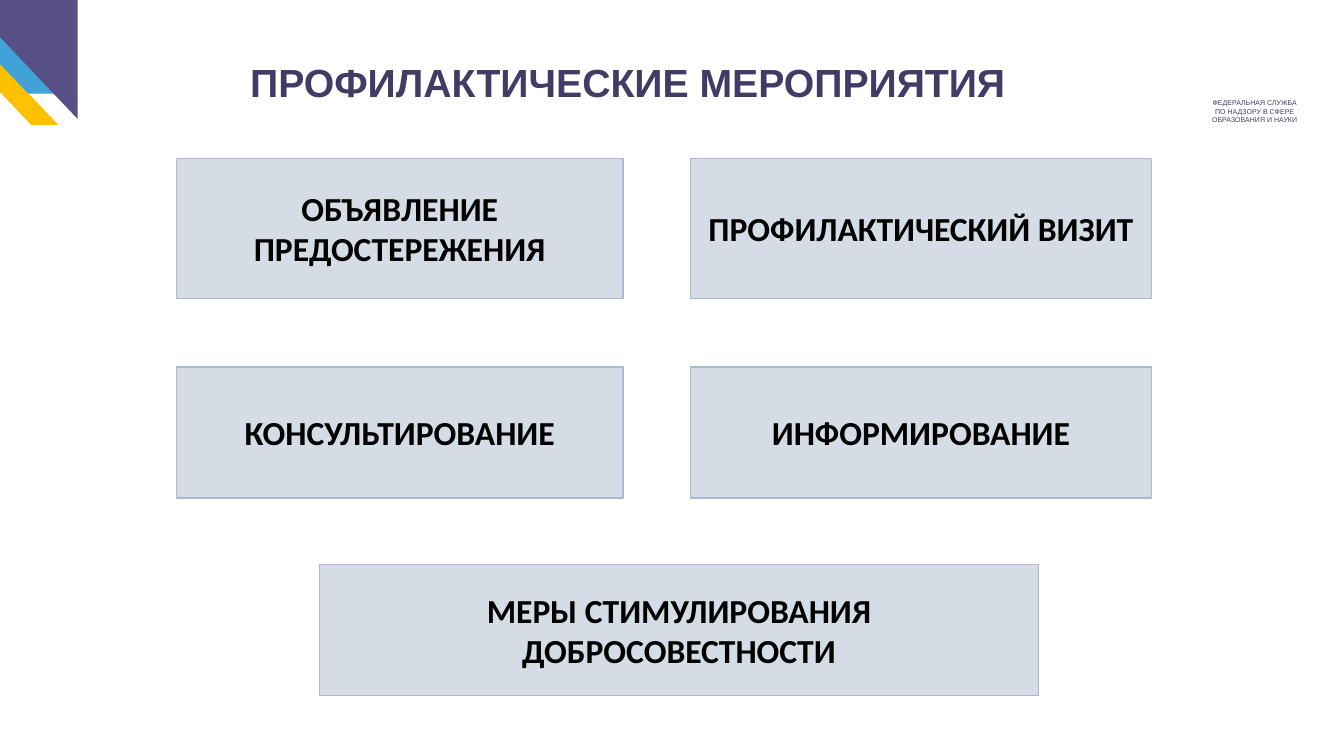
from pptx import Presentation
from pptx.dml.color import RGBColor
from pptx.enum.shapes import MSO_SHAPE as Preset
from pptx.enum.text import MSO_ANCHOR as Anchor, PP_ALIGN as Align
from pptx.util import Pt

PX = 9144
INDIGO = "413B66"
COLUMNS = [(175, 443), (685, 457)]
ROWS = [(157, 139), (364, 130)]
MEASURES = [
    ["ОБЪЯВЛЕНИЕ ПРЕДОСТЕРЕЖЕНИЯ", "ПРОФИЛАКТИЧЕСКИЙ ВИЗИТ"],
    ["КОНСУЛЬТИРОВАНИЕ", "ИНФОРМИРОВАНИЕ"],
]


def color(value):
    return RGBColor.from_string(value)


def emu(*lengths):
    return [length * PX for length in lengths]


def write(frame, text, size, font="Arial", ink=INDIGO, bold=False, anchor=Anchor.TOP):
    frame.word_wrap = True
    frame.vertical_anchor = anchor
    frame.text = text
    for paragraph in frame.paragraphs:
        paragraph.alignment = Align.CENTER
        paragraph.font.size = Pt(size)
        paragraph.font.name = font
        paragraph.font.bold = bold
        paragraph.font.color.rgb = color(ink)


def add_label(slide, box, text, **style):
    label = slide.shapes.add_textbox(*emu(*box))
    write(label.text_frame, text, **style)


def add_filled(slide, preset, box, fill):
    figure = slide.shapes.add_shape(preset, *emu(*box))
    figure.shadow.inherit = False
    figure.fill.solid()
    figure.fill.fore_color.rgb = color(fill)
    figure.line.fill.background()
    return figure


def add_stripe(slide, box, fill):
    stripe = add_filled(slide, Preset.PARALLELOGRAM, box, fill)
    stripe.adjustments[0] = 0.95
    stripe._element.spPr.xfrm.set("flipH", "1")


def add_corner(slide):
    add_stripe(slide, (-83, 4, 141, 120), "FFC000")
    add_stripe(slide, (-86, -27, 141, 120), "41A2D8")
    triangle = add_filled(slide, Preset.RIGHT_TRIANGLE, (-36, -1, 113, 119), "565087")
    triangle.rotation = 180


def add_measure(slide, box, text):
    card = add_filled(slide, Preset.RECTANGLE, box, "D6DCE5")
    card.line.color.rgb = color("ADB9CA")
    card.line.width = Pt(1)
    write(card.text_frame, text, size=24, font="Calibri", ink="000000",
          bold=True, anchor=Anchor.MIDDLE)


def main():
    deck = Presentation()
    deck.slide_width, deck.slide_height = emu(1333, 750)
    slide = deck.slides.add_slide(deck.slide_layouts[6])

    add_corner(slide)
    add_label(slide, (1177, 93, 135, 35),
              "ФЕДЕРАЛЬНАЯ СЛУЖБА\nПО НАДЗОРУ В СФЕРЕ ОБРАЗОВАНИЯ И НАУКИ", size=5)
    add_label(slide, (91, 53, 1063, 57),
              "ПРОФИЛАКТИЧЕСКИЕ МЕРОПРИЯТИЯ", size=28, bold=True)

    for (top, height), measures in zip(ROWS, MEASURES):
        for (left, width), measure in zip(COLUMNS, measures):
            add_measure(slide, (left, top, width, height), measure)
    add_measure(slide, (317, 560, 713, 130), "МЕРЫ СТИМУЛИРОВАНИЯ ДОБРОСОВЕСТНОСТИ")

    deck.save("out.pptx")


if __name__ == "__main__":
    main()
